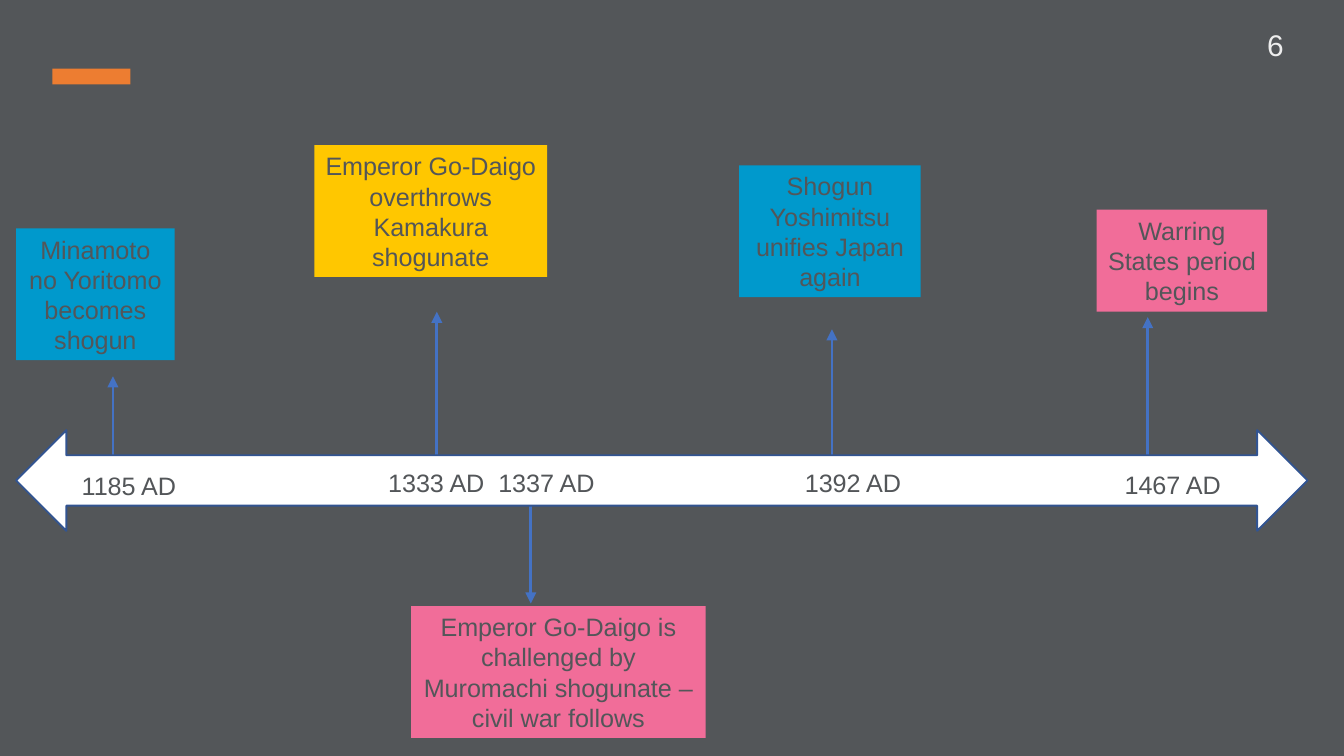
import pptx
import pptx.util
import pptx.dml.color
import pptx.enum.shapes
import pptx.enum.text
import pptx.oxml
import pptx.oxml.ns
from pptx.oxml.xmlchemy import OxmlElement

Pt = pptx.util.Pt
SHAPE = pptx.enum.shapes.MSO_SHAPE
SLATE, WHITE, BLUE, PINK, YELLOW = "535659", "FFFFFF", "0099CC", "F16D99", "FFC700"
ORANGE, STEM, OUTLINE, PALE = "ED7D31", "4472C4", "325491", "EDEDED"

ACCENT = (28.1, 36.7, 41.8, 8.6)
TIMELINE = (8.6, 230.4, 691.9, 54)
PAGE_NUMBER = (671.8, 10.8, 33.8, 26.6)
YEAR_HEIGHT = 23.8

EVENTS = [
    dict(year="1185 AD", year_at=(36.7, 248.4, 79.2), stem=(60.5, 244.1, 201.6),
         story="Minamoto no Yoritomo becomes shogun",
         box=(8.6, 122.4, 85, 70.6), color=BLUE),
    dict(year="1333 AD", year_at=(200.9, 247, 67), stem=(234, 245.5, 167),
         story="Emperor Go-Daigo overthrows Kamakura shogunate",
         box=(168.5, 77.8, 124.6, 70.6), color=YELLOW),
    dict(year="1337 AD", year_at=(259.9, 247, 79.2), stem=(284.4, 269.3, 323.3),
         story="Emperor Go-Daigo is challenged by Muromachi shogunate – civil war follows",
         box=(220.3, 324.7, 157.7, 70.6), color=PINK),
    dict(year="1392 AD", year_at=(424.1, 247, 75.6), stem=(445.7, 255.6, 176.4),
         story="Shogun Yoshimitsu unifies Japan again",
         box=(396, 88.6, 97.2, 70.6), color=BLUE),
    dict(year="1467 AD", year_at=(595.4, 247.7, 70.6), stem=(614.9, 249.1, 169.9),
         story="Warring States period begins",
         box=(587.5, 112.3, 91.4, 54.7), color=PINK),
]


def rgb(color):
    return pptx.dml.color.RGBColor.from_string(color)


def add_block(kind, bounds, fill, line=None):
    block = slide.shapes.add_shape(kind, *map(Pt, bounds))
    block.shadow.inherit = False
    block.fill.solid()
    block.fill.fore_color.rgb = rgb(fill)
    if line:
        block.line.color.rgb = rgb(line)
        block.line.width = Pt(1)
    else:
        block.line.fill.background()
    return block


def write(holder, text, size=13.5, color=SLATE, align="LEFT", anchor="TOP", insets=(7.2, 3.6)):
    frame = holder.text_frame
    frame.word_wrap = True
    frame.vertical_anchor = getattr(pptx.enum.text.MSO_ANCHOR, anchor)
    frame.margin_left = frame.margin_right = Pt(insets[0])
    frame.margin_top = frame.margin_bottom = Pt(insets[1])
    paragraph = frame.paragraphs[0]
    paragraph.alignment = getattr(pptx.enum.text.PP_ALIGN, align)
    run = paragraph.add_run()
    run.text = text
    run.font.name = "Arial"
    run.font.size = Pt(size)
    run.font.color.rgb = rgb(color)


def add_stem(x, start, end):
    stem = slide.shapes.add_connector(
        pptx.enum.shapes.MSO_CONNECTOR.STRAIGHT, Pt(x), Pt(start), Pt(x), Pt(end))
    stem.line.color.rgb = rgb(STEM)
    stem.line.width = Pt(1.5)
    head = OxmlElement("a:tailEnd")
    head.set("type", "triangle")
    stem.line._get_or_add_ln().append(head)
    stem._element.spPr.append(OxmlElement("a:effectLst"))


deck = pptx.Presentation()
deck.slide_width, deck.slide_height = Pt(720), Pt(405)
slide = deck.slides.add_slide(deck.slide_layouts[6])
slide.background.fill.solid()
slide.background.fill.fore_color.rgb = rgb(SLATE)

add_block(SHAPE.RECTANGLE, ACCENT, ORANGE)
for event in EVENTS:
    add_stem(*event["stem"])
add_block(SHAPE.LEFT_RIGHT_ARROW, TIMELINE, WHITE, OUTLINE)
for event in EVENTS:
    story_box = add_block(SHAPE.RECTANGLE, event["box"], event["color"])
    write(story_box, event["story"], align="CENTER", insets=(5, 2.9))
    year_label = slide.shapes.add_textbox(*map(Pt, (*event["year_at"], YEAR_HEIGHT)))
    write(year_label, event["year"])
write(slide.shapes.add_textbox(*map(Pt, PAGE_NUMBER)), "6", size=16, color=PALE)

deck.save("out.pptx")
